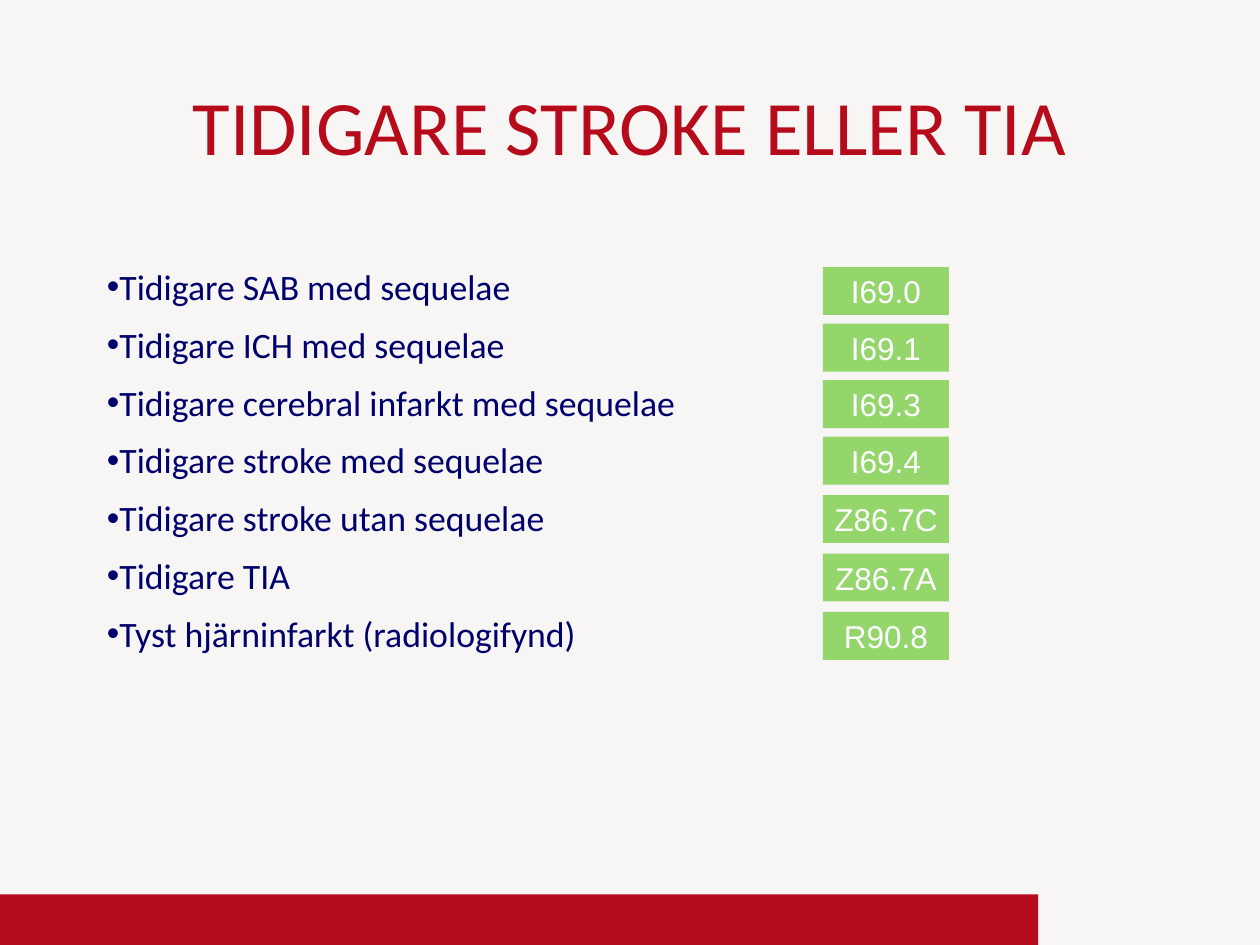
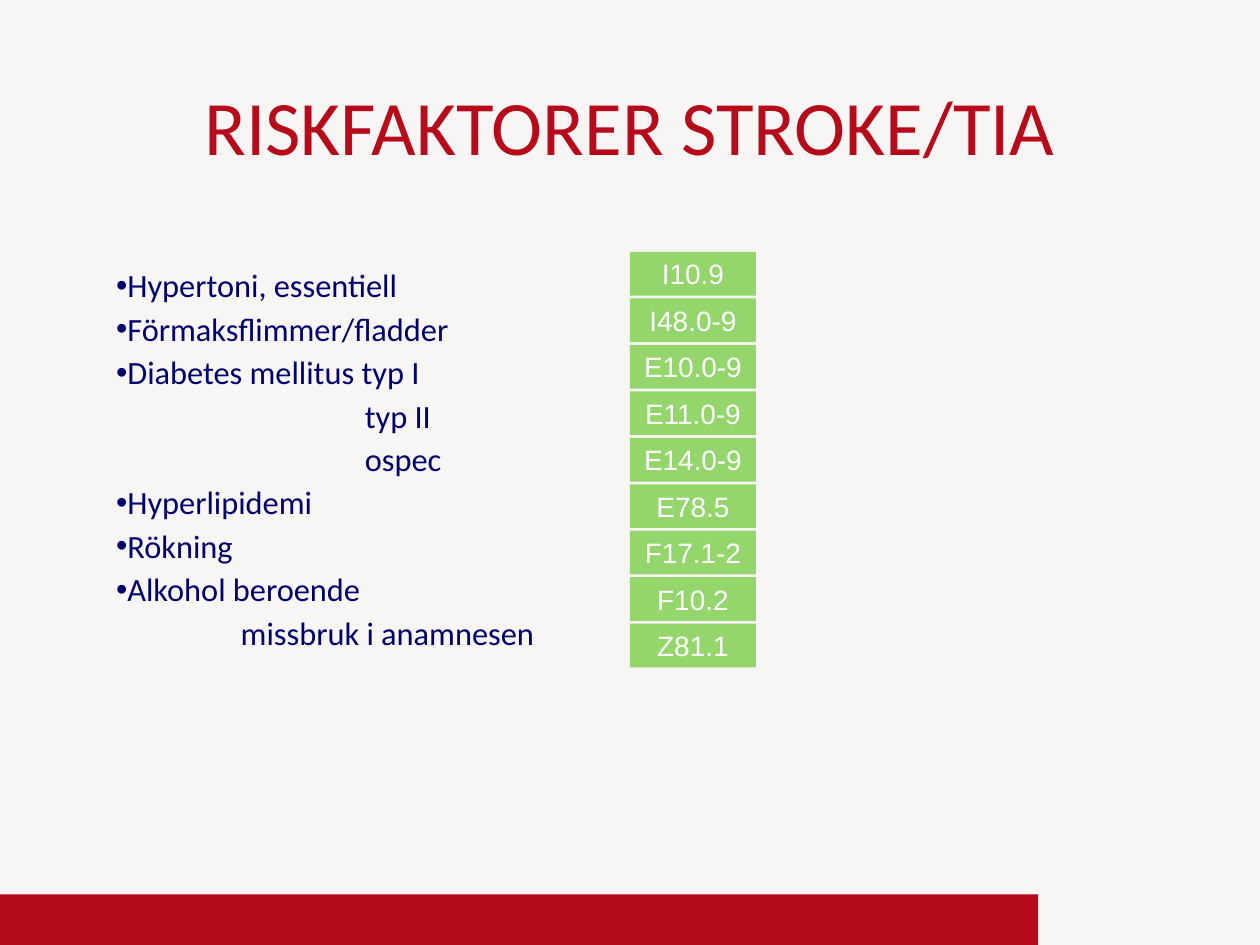
"""Build two slides that pair stroke diagnoses with their codes."""
from dataclasses import dataclass
from lxml import etree
from pptx import Presentation
from pptx.dml.color import RGBColor
from pptx.enum.shapes import MSO_SHAPE
from pptx.enum.text import MSO_ANCHOR, PP_ALIGN
from pptx.oxml.ns import qn
from pptx.util import Pt

RECT = MSO_SHAPE.RECTANGLE
TOP, MIDDLE = MSO_ANCHOR.TOP, MSO_ANCHOR.MIDDLE
LEFT, CENTER = PP_ALIGN.LEFT, PP_ALIGN.CENTER


@dataclass(frozen=True)
class Theme:
    paper: str = "F7F6F5"
    red: str = "B50B1B"
    navy: str = "00006D"
    green: str = "94D66C"
    white: str = "FFFFFF"
    head: str = "Calibri"
    code: str = "Arial"
    title: float = 44


theme = Theme()

pages = [
    dict(
        title="TIDIGARE STROKE ELLER TIA",
        size=20.4, before=3.7, after=8, margin=7.2, hang=7.2,
        rows=[
            ("Tidigare SAB med sequelae", 0),
            ("Tidigare ICH med sequelae", 0),
            ("Tidigare cerebral infarkt med sequelae", 0),
            ("Tidigare stroke med sequelae", 0),
            ("Tidigare stroke utan sequelae", 0),
            ("Tidigare TIA", 0),
            ("Tyst hjärninfarkt (radiologifynd)", 0),
        ],
        codes=["I69.0", "I69.1", "I69.3", "I69.4", "Z86.7C", "Z86.7A", "R90.8"],
        left=470.3, top=152.6, high=27.4, step=32.3, split=3, extra=1.1, type=18,
    ),
    dict(
        title="RISKFAKTORER STROKE/TIA",
        size=18.5, before=3.45, after=2, margin=6, hang=0.7,
        rows=[
            ("Hypertoni, essentiell", 0),
            ("Förmaksflimmer/fladder", 0),
            ("Diabetes mellitus typ I", 0),
            ("typ II", 147.4),
            ("ospec", 147.4),
            ("Hyperlipidemi", 0),
            ("Rökning", 0),
            ("Alkohol beroende", 0),
            ("missbruk i anamnesen", 76.5),
        ],
        codes=["I10.9", "I48.0-9", "E10.0-9", "E11.0-9", "E14.0-9", "E78.5",
               "F17.1-2", "F10.2", "Z81.1"],
        left=360, top=144, high=25, step=26.55, split=9, extra=0, type=16,
    ),
]


def add_box(slide, left, top, width, height, fill=None):
    """Add a filled rectangle, or a plain text box when there is no fill."""
    place = Pt(left), Pt(top), Pt(width), Pt(height)
    if fill is None:
        box = slide.shapes.add_textbox(*place)
    else:
        box = slide.shapes.add_shape(RECT, *place)
        box.shadow.inherit = False
        box.fill.solid()
        box.fill.fore_color.rgb = RGBColor.from_string(fill)
        box.line.fill.background()
    box.text_frame.word_wrap = True
    return box


def style(line, align, font, size, color):
    """Align a paragraph and format its runs."""
    line.alignment = align
    for run in line.runs:
        run.font.name = font
        run.font.size = Pt(size)
        run.font.color.rgb = RGBColor.from_string(color)


deck = Presentation()
deck.slide_width, deck.slide_height = Pt(720), Pt(540)

for page in pages:
    slide = deck.slides.add_slide(deck.slide_layouts[6])
    slide.background.fill.solid()
    slide.background.fill.fore_color.rgb = RGBColor.from_string(theme.paper)
    add_box(slide, 0, 511, 593.3, 29, theme.red)

    title = add_box(slide, 54, 13, 612, 116).text_frame
    title.vertical_anchor = MIDDLE
    title.text = page["title"]
    style(title.paragraphs[0], CENTER, theme.head, theme.title, theme.red)

    body = add_box(slide, 54, 151.2, 612, 246).text_frame
    body.text = "\n".join(text for text, _ in page["rows"])
    for row, (line, (_, indent)) in enumerate(zip(body.paragraphs, page["rows"])):
        line.line_spacing = 0.87
        line.space_before = Pt(page["before"] if row else 0)
        line.space_after = Pt(page["after"])
        props = line._p.get_or_add_pPr()
        props.set("marL", str(Pt(indent or page["margin"])))
        if not indent:
            props.set("indent", str(-Pt(page["hang"])))
            etree.SubElement(props, qn("a:buFont"), typeface=theme.code)
            etree.SubElement(props, qn("a:buChar"), char="•")
        style(line, LEFT, theme.head, page["size"], theme.navy)

    for row, code in enumerate(page["codes"]):
        top = page["top"] + row * page["step"] + max(0, row - page["split"]) * page["extra"]
        label = add_box(slide, page["left"], top, 72, page["high"], theme.green).text_frame
        label.vertical_anchor = TOP
        label.margin_left = label.margin_right = Pt(5)
        label.margin_top = label.margin_bottom = Pt(2.9)
        label.text = code
        style(label.paragraphs[0], CENTER, theme.code, page["type"], theme.white)

deck.save("out.pptx")
